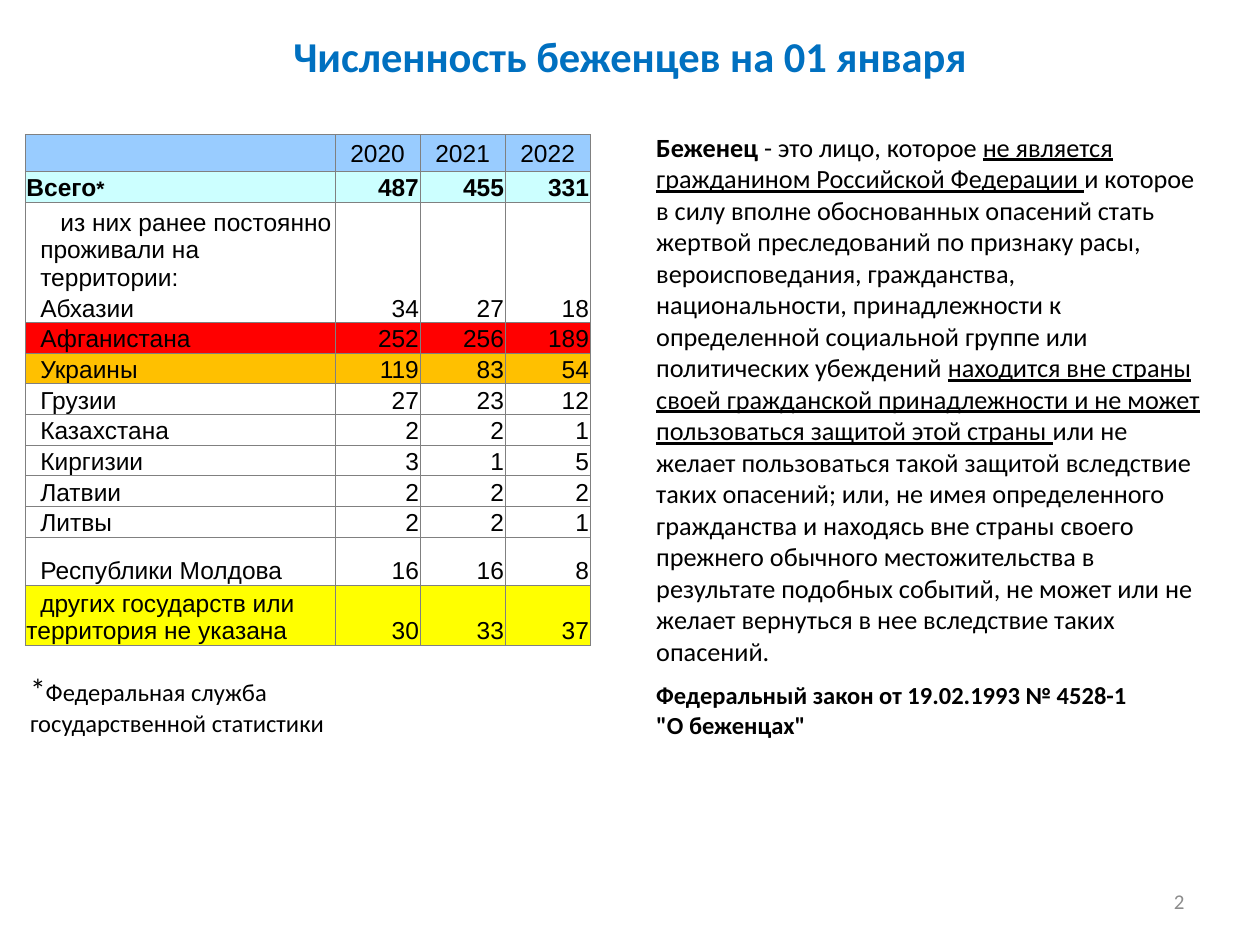
from dataclasses import dataclass
from typing import Optional

from lxml import etree
from pptx import Presentation
from pptx import util as u
from pptx.dml.color import RGBColor
from pptx.enum import text as t
from pptx.oxml.ns import qn

COLORS = {
    "title": "0070C0", "text": "000000", "number": "8C8C8C", "border": "808080",
    "header": "99CCFF", "total": "CCFFFF", "red": "FF0000",
    "orange": "FFC000", "yellow": "FFFF00", "white": "FFFFFF",
}
CELL = 0.1  # the slide is a grid of 100 columns and 75 rows
COUNTRY_INDENT = 0.11
LEFT, CENTER, RIGHT = t.PP_ALIGN.LEFT, t.PP_ALIGN.CENTER, t.PP_ALIGN.RIGHT
TOP, MIDDLE, BOTTOM = t.MSO_ANCHOR.TOP, t.MSO_ANCHOR.MIDDLE, t.MSO_ANCHOR.BOTTOM


@dataclass
class Area:
    column: float
    row: float
    columns: float
    rows: float

    def lengths(self) -> list[int]:
        return [grid(n) for n in (self.column, self.row, self.columns, self.rows)]


@dataclass
class TableRow:
    label: str
    values: tuple[str, str, str]
    fill: Optional[str] = None
    height: float = 2.3
    indent: float = COUNTRY_INDENT
    bold: bool = False
    sides: str = "LRTB"
    left_margin: float = 0.01
    align: t.PP_ALIGN = RIGHT
    anchor: t.MSO_ANCHOR = BOTTOM
    note: str = ""


ROWS = [
    TableRow("", ("2020", "2021", "2022"), "header", 2.9, align=CENTER, anchor=MIDDLE),
    TableRow("Всего", ("487", "455", "331"), "total", indent=0, bold=True, note="*"),
    TableRow("из них ранее постоянно проживали на территории:", ("", "", ""),
             height=4.5, indent=0.16, sides="LRT", left_margin=0.12),
    TableRow("Абхазии", ("34", "27", "18"), sides="LRB"),
    TableRow("Афганистана", ("252", "256", "189"), "red"),
    TableRow("Украины", ("119", "83", "54"), "orange"),
    TableRow("Грузии", ("27", "23", "12"), "white"),
    TableRow("Казахстана", ("2", "2", "1"), "white"),
    TableRow("Киргизии", ("3", "1", "5")),
    TableRow("Латвии", ("2", "2", "2")),
    TableRow("Литвы", ("2", "2", "1")),
    TableRow("Республики Молдова", ("16", "16", "8"), height=3.8),
    TableRow("других государств или территория не указана", ("30", "33", "37"),
             "yellow", 3.7),
]
COLUMN_WIDTHS = [24.6, 6.75, 6.75, 6.75]

DEFINITION = [
    ("Беженец ", {"bold": True}),
    ("- это лицо, которое ", {}),
    ("не является гражданином Российской Федерации ", {"underline": True}),
    ("и которое в силу вполне обоснованных опасений стать жертвой преследований "
     "по признаку расы, вероисповедания, гражданства, национальности, "
     "принадлежности к определенной социальной группе или политических убеждений ", {}),
    ("находится вне страны своей гражданской принадлежности и не может "
     "пользоваться защитой этой страны ", {"underline": True}),
    ("или не желает пользоваться такой защитой вследствие таких опасений; или, "
     "не имея определенного гражданства и находясь вне страны своего прежнего "
     "обычного местожительства в результате подобных событий, не может или не "
     "желает вернуться в нее вследствие таких опасений.", {}),
]


def grid(cells: float) -> int:
    return u.Inches(cells * CELL)


def write(paragraph, text: str, *, size: float, font: str = "Calibri",
          color: str = "text", bold: bool = False, underline: bool = False,
          align: t.PP_ALIGN = LEFT) -> None:
    """Append one formatted run; an empty text only sets the line's size."""
    paragraph.alignment = align
    if not text:
        end = etree.SubElement(paragraph._p, qn("a:endParaRPr"))
        end.set("sz", str(int(size * 100)))
        return
    run = paragraph.add_run()
    run.text = text
    run.font.size = u.Pt(size)
    run.font.name = font
    run.font.bold = bold
    run.font.underline = underline
    run.font.color.rgb = RGBColor.from_string(COLORS[color])


def add_text_frame(slide, area: Area, anchor: t.MSO_ANCHOR = TOP):
    frame = slide.shapes.add_textbox(*area.lengths()).text_frame
    frame.word_wrap = True
    frame.vertical_anchor = anchor
    return frame


def add_borders(cell, sides: str) -> None:
    properties = cell._tc.get_or_add_tcPr()
    for side in "LRTB":
        line = etree.SubElement(properties, qn(f"a:ln{side}"), w=str(u.Pt(0.5)))
        if side in sides:
            fill = etree.SubElement(line, qn("a:solidFill"))
            etree.SubElement(fill, qn("a:srgbClr"), val=COLORS["border"])
        else:
            etree.SubElement(line, qn("a:noFill"))


def format_cell(cell, row: TableRow, left_margin: float) -> None:
    cell.margin_left = u.Inches(left_margin)
    cell.margin_right = cell.margin_top = u.Inches(0.01)
    cell.margin_bottom = 0
    cell.vertical_anchor = row.anchor
    add_borders(cell, row.sides)
    if row.fill:
        cell.fill.solid()
        cell.fill.fore_color.rgb = RGBColor.from_string(COLORS[row.fill])
    else:
        cell.fill.background()


def add_refugee_table(slide) -> None:
    area = Area(2, 10.7, sum(COLUMN_WIDTHS), sum(row.height for row in ROWS))
    table = slide.shapes.add_table(len(ROWS), len(COLUMN_WIDTHS), *area.lengths()).table
    table.first_row = table.horz_banding = False
    for column, width in zip(table.columns, COLUMN_WIDTHS):
        column.width = grid(width)
    for index, row in enumerate(ROWS):
        table.rows[index].height = grid(row.height)
        label, *numbers = table.rows[index].cells
        format_cell(label, row, row.left_margin)
        paragraph = label.text_frame.paragraphs[0]
        paragraph._p.get_or_add_pPr().set("indent", str(u.Inches(row.indent)))
        write(paragraph, row.label, size=14, font="Arial", bold=row.bold)
        if row.note:
            write(paragraph, row.note, size=12, font="Arial", bold=row.bold)
        for cell, value in zip(numbers, row.values):
            format_cell(cell, row, 0.01)
            write(cell.text_frame.paragraphs[0], value, size=14, font="Arial",
                  bold=row.bold, align=row.align)


def main() -> None:
    presentation = Presentation()
    presentation.slide_width, presentation.slide_height = grid(100), grid(75)
    slide = presentation.slides.add_slide(presentation.slide_layouts[6])

    title = add_text_frame(slide, Area(0, 1.9, 100, 5), MIDDLE)
    write(title.paragraphs[0], "Численность беженцев на 01 января", size=24.3,
          color="title", bold=True, align=CENTER)

    number = add_text_frame(slide, Area(71.7, 69.5, 23.3, 4), MIDDLE)
    write(number.paragraphs[0], "2", size=12, color="number", align=RIGHT)

    add_refugee_table(slide)

    definition = add_text_frame(slide, Area(51.1, 9.9, 46.1, 41.4))
    for text, style in DEFINITION:
        write(definition.paragraphs[0], text, size=15, **style)

    law = add_text_frame(slide, Area(51.1, 53.5, 41.7, 5.7))
    write(law.paragraphs[0], 'Федеральный закон от 19.02.1993 № 4528-1 "О беженцах"',
          size=14, bold=True)

    source = add_text_frame(slide, Area(1.4, 52.7, 50, 6.4))
    write(source.paragraphs[0], "*", size=18)
    write(source.paragraphs[0], "Федеральная служба", size=14)
    write(source.add_paragraph(), "государственной статистики", size=14)

    presentation.save("out.pptx")


if __name__ == "__main__":
    main()
